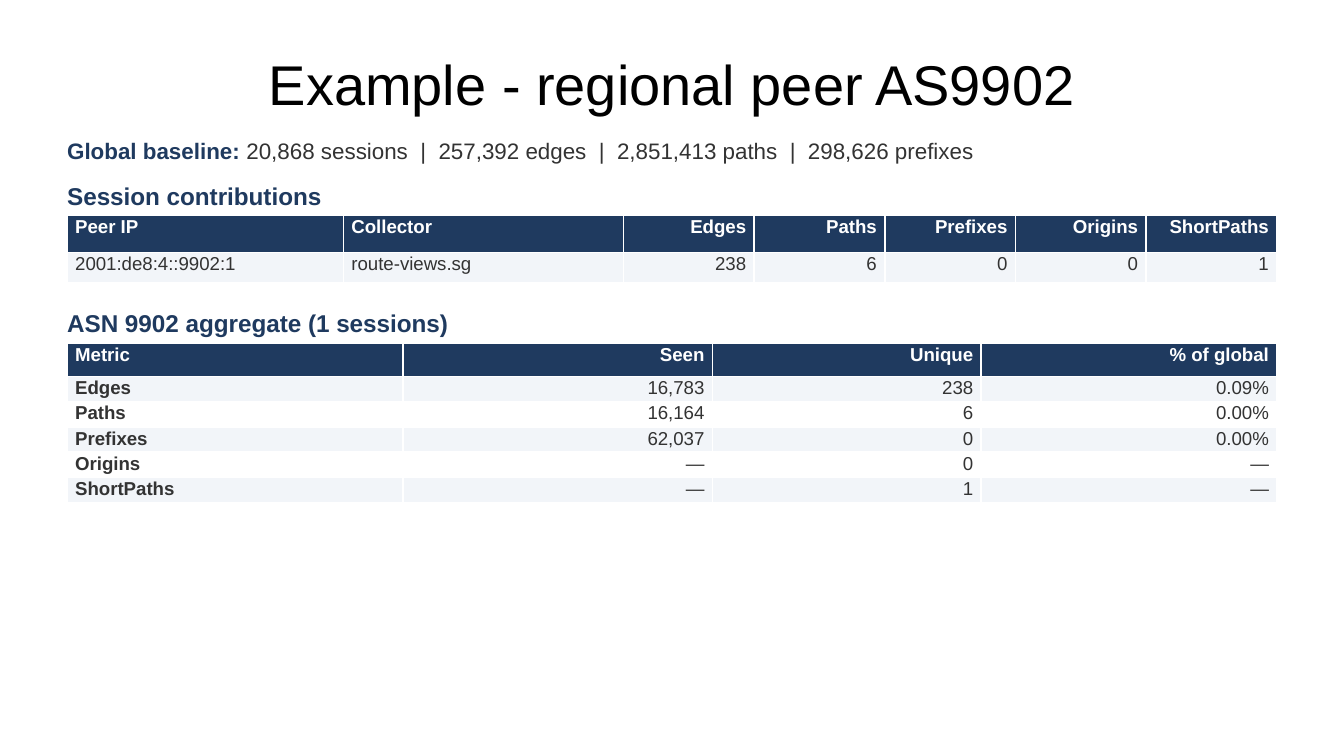
from pptx import Presentation
from pptx.dml.color import RGBColor
from pptx.enum.text import MSO_ANCHOR as Anchor, PP_ALIGN as Align
from pptx.util import Pt

NAVY, GREY, WHITE, BLACK, BAND = "1F3A5F", "333333", "FFFFFF", "000000", "F2F5F9"
LEFT, WIDTH = 36, 648

SESSIONS = [
    ["Peer IP", "Collector", "Edges", "Paths", "Prefixes", "Origins", "ShortPaths"],
    ["2001:de8:4::9902:1", "route-views.sg", "238", "6", "0", "0", "1"],
]
AGGREGATE = [
    ["Metric", "Seen", "Unique", "% of global"],
    ["Edges", "16,783", "238", "0.09%"],
    ["Paths", "16,164", "6", "0.00%"],
    ["Prefixes", "62,037", "0", "0.00%"],
    ["Origins", "—", "0", "—"],
    ["ShortPaths", "—", "1", "—"],
]


def rgb(value):
    return RGBColor.from_string(value)


def add_run(p, text, size, color, bold=False):
    r = p.add_run()
    r.text = text
    for name, value in {"name": "Arial", "size": Pt(size), "bold": bold}.items():
        setattr(r.font, name, value)
    r.font.color.rgb = rgb(color)


def set_margins(target, x, y):
    for side, value in {"left": x, "right": x, "top": y, "bottom": y}.items():
        setattr(target, f"margin_{side}", Pt(value))


def add_text(s, top, height, runs, align=Align.LEFT, anchor=Anchor.TOP):
    """Add a full-width line; each run is (text, size, color, bold)."""
    tf = s.shapes.add_textbox(Pt(LEFT), Pt(top), Pt(WIDTH), Pt(height)).text_frame
    tf.word_wrap = True
    tf.vertical_anchor = anchor
    set_margins(tf, 0, 0)
    p = tf.paragraphs[0]
    p.alignment = align
    for run in runs:
        add_run(p, *run)


def add_heading(s, top, text):
    add_text(s, top, 17, [(text, 13, NAVY, True)])


def add_data_table(s, top, rows, widths, head_height, row_height, text_cols, bold_first=False):
    """Add a banded table whose columns after the first text_cols align right."""
    height = head_height + row_height * (len(rows) - 1)
    table = s.shapes.add_table(len(rows), len(widths), Pt(LEFT), Pt(top),
                               Pt(WIDTH), Pt(height)).table
    for column, width in zip(table.columns, widths):
        column.width = Pt(width)
    for i, row in enumerate(rows):
        head = i == 0
        table.rows[i].height = Pt(head_height if head else row_height)
        fill = NAVY if head else BAND if i % 2 else WHITE
        for j, text in enumerate(row):
            cell = table.cell(i, j)
            cell.fill.solid()
            cell.fill.fore_color.rgb = rgb(fill)
            set_margins(cell, 4.3, 0.72)
            p = cell.text_frame.paragraphs[0]
            p.alignment = Align.LEFT if j < text_cols else Align.RIGHT
            bold = head or (bold_first and j == 0)
            add_run(p, text, 10, WHITE if head else GREY, bold)


def main():
    prs = Presentation()
    prs.slide_width, prs.slide_height = Pt(720), Pt(405)
    s = prs.slides.add_slide(prs.slide_layouts[6])

    add_text(s, 17, 55, [("Example - regional peer AS9902", 30, BLACK)],
             Align.CENTER, Anchor.MIDDLE)
    add_text(s, 73.5, 20, [
        ("Global baseline: ", 12, NAVY, True),
        ("20,868 sessions  |  257,392 edges  |  2,851,413 paths  |  298,626 prefixes", 12, GREY),
    ])
    add_heading(s, 97.2, "Session contributions")
    add_data_table(s, 115.2, SESSIONS, [148, 150] + [70] * 5, 20, 16.6, text_cols=2)
    add_heading(s, 165, "ASN 9902 aggregate (1 sessions)")
    add_data_table(s, 183.8, AGGREGATE, [180, 165.6, 144, 158.4], 18, 13.4,
                   text_cols=1, bold_first=True)
    prs.save("out.pptx")


if __name__ == "__main__":
    main()
